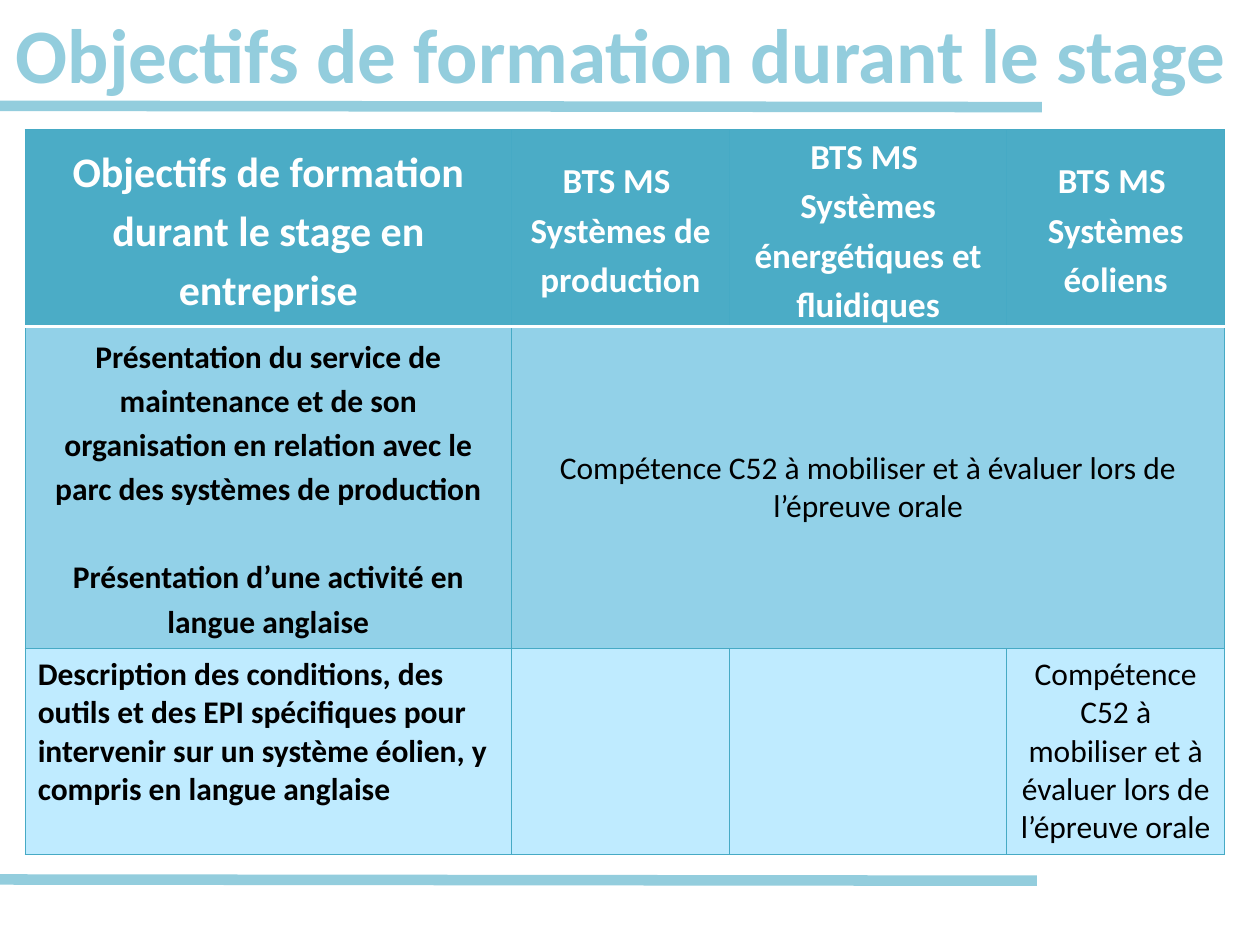
from dataclasses import dataclass

from lxml import etree
from pptx import Presentation
from pptx.dml.color import RGBColor
from pptx.enum import shapes, text
from pptx.oxml import ns
from pptx.util import Inches, Pt

SKY, EDGE, HEAD = "93CDDD", "46AAC5", "4BACC6"
MID, PALE, WHITE, BLACK = "92D1E8", "BFEBFF", "FFFFFF", "000000"
CENTER, LEFT = text.PP_ALIGN.CENTER, text.PP_ALIGN.LEFT
MIDDLE, TOP = text.MSO_ANCHOR.MIDDLE, text.MSO_ANCHOR.TOP
SKILL = "Compétence C52 à mobiliser et à évaluer lors de l’épreuve orale"


@dataclass
class Style:
    size: float
    color: str = BLACK
    bold: bool = True
    align: int = CENTER
    lead: float = 1.0
    gap: float = 0


@dataclass
class Box:
    row: int
    col: int
    lines: list[str]
    style: Style
    anchor: int = TOP


@dataclass
class Rule:
    x: float
    y: float
    end: float


def rgb(code: str) -> RGBColor:
    return RGBColor.from_string(code)


def assign(item, values: dict) -> None:
    for name, value in values.items():
        setattr(item, name, value)


def write(frame, lines: list[str], style: Style) -> None:
    for i, line in enumerate(lines):
        par = frame.add_paragraph() if i else frame.paragraphs[0]
        assign(par, {"alignment": style.align, "line_spacing": style.lead,
                     "space_before": Pt(style.gap if i else 0)})
        run = par.add_run()
        run.text = line
        assign(run.font, {"name": "Calibri", "size": Pt(style.size), "bold": style.bold})
        run.font.color.rgb = rgb(style.color)


def border(cell, side: str, color: str, width: float) -> None:
    props = cell._tc.get_or_add_tcPr()
    line = etree.SubElement(props, ns.qn(f"a:ln{side}"), w=str(Pt(width)))
    fill = etree.SubElement(line, ns.qn("a:solidFill"))
    etree.SubElement(fill, ns.qn("a:srgbClr"), val=color)


def draw_rule(slide, rule: Rule) -> None:
    line = slide.shapes.add_connector(
        shapes.MSO_CONNECTOR.STRAIGHT, Inches(rule.x), Inches(rule.y),
        Inches(rule.end), Inches(rule.y + 0.01))
    line.line.color.rgb = rgb(SKY)
    line.line.width = Pt(6)
    etree.SubElement(line._element.spPr, ns.qn("a:effectLst"))


def draw_title(slide, words: str) -> None:
    box = slide.shapes.add_textbox(Inches(0), Inches(-0.27), Inches(10), Inches(1.26))
    assign(box.text_frame, {"word_wrap": True, "vertical_anchor": MIDDLE})
    write(box.text_frame, [words], Style(44, SKY, lead=1.15))


def draw_table(slide, boxes: list[Box]) -> None:
    cols, rows = [3.86, 1.73, 2.2, 1.73], [1.56, 2.56, 1.63]
    table = slide.shapes.add_table(
        len(rows), len(cols), Inches(0.2), Inches(1.03),
        Inches(sum(cols)), Inches(sum(rows))).table
    for col, width in zip(table.columns, cols):
        col.width = Inches(width)
    for row, height in zip(table.rows, rows):
        row.height = Inches(height)
    for r, color in enumerate([HEAD, MID, PALE]):
        for c in range(len(cols)):
            cell = table.cell(r, c)
            for side in "LRTB":
                white = (r, side) in ((0, "B"), (1, "T"))
                border(cell, side, WHITE if white else EDGE, 2 if white else 0.75)
            cell.fill.solid()
            cell.fill.fore_color.rgb = rgb(color)
            if r == 0:
                assign(cell, {"margin_left": Inches(0.06), "margin_right": Inches(0.06),
                              "margin_top": 0, "margin_bottom": 0})
    table.cell(1, 1).merge(table.cell(1, 3))
    for box in boxes:
        cell = table.cell(box.row, box.col)
        cell.vertical_anchor = box.anchor
        write(cell.text_frame, box.lines, box.style)


def main() -> None:
    deck = Presentation()
    assign(deck, {"slide_width": Inches(10), "slide_height": Inches(7.5)})
    slide = deck.slides.add_slide(deck.slide_layouts[6])

    head = Style(20, WHITE, lead=1.15)
    plain = Style(18, bold=False)
    tracks = ["Systèmes de production", "Systèmes énergétiques et fluidiques",
              "Systèmes éoliens"]
    boxes = [
        Box(0, 0, ["Objectifs de formation durant le stage en entreprise"],
            Style(24, WHITE, lead=1.15), MIDDLE),
        *(Box(0, i, ["BTS MS ", track], head, MIDDLE)
          for i, track in enumerate(tracks, 1)),
        Box(1, 0, ["Présentation du service de maintenance et de son organisation "
                   "en relation avec le parc des systèmes de production",
                   "Présentation d’une activité en langue anglaise"],
            Style(18, lead=1.15, gap=25)),
        Box(1, 1, [SKILL], plain, MIDDLE),
        Box(2, 0, ["Description des conditions, des outils et des EPI spécifiques pour "
                   "intervenir sur un système éolien, y compris en langue anglaise"],
            Style(18, align=LEFT)),
        Box(2, 3, [SKILL], plain),
    ]
    draw_rule(slide, Rule(-0.04, 6.98, 8.23))
    draw_title(slide, "Objectifs de formation durant le stage ")
    draw_rule(slide, Rule(0, 0.84, 8.27))
    draw_table(slide, boxes)
    deck.save("out.pptx")


if __name__ == "__main__":
    main()
